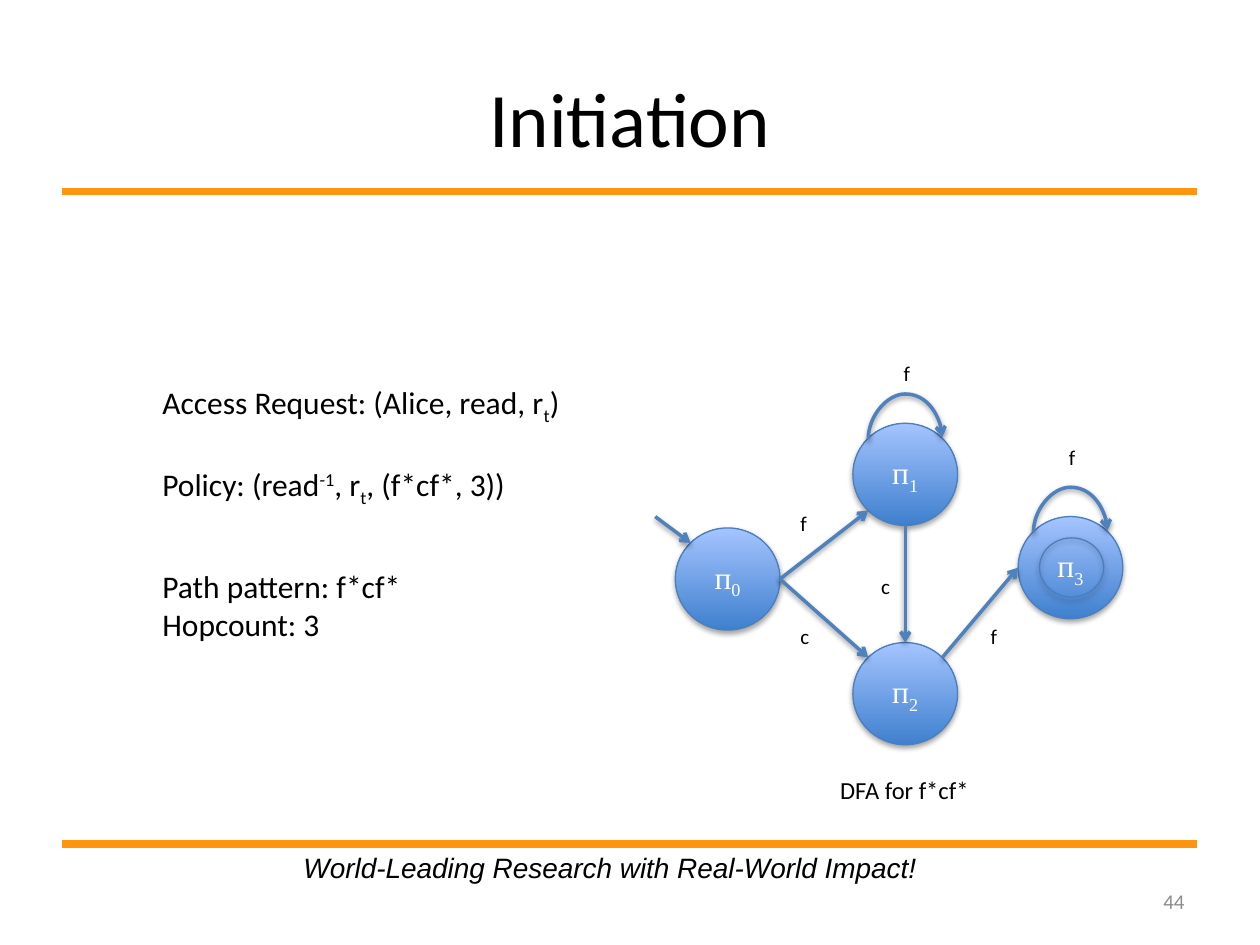
from math import cos, radians, sin

from lxml import etree
from pptx import Presentation
from pptx.dml.color import RGBColor
from pptx.enum.shapes import MSO_CONNECTOR as Link, MSO_SHAPE as Preset
from pptx.enum.text import MSO_ANCHOR as Anchor, PP_ALIGN as Align
from pptx.oxml.ns import qn
from pptx.util import Pt

BLACK = RGBColor(0x00, 0x00, 0x00)
WHITE = RGBColor(0xFF, 0xFF, 0xFF)
GRAY = RGBColor(0x8C, 0x8C, 0x8C)
ORANGE = RGBColor(0xFF, 0x95, 0x0E)
ARROW_BLUE = RGBColor(0x4F, 0x81, 0xBD)
OUTLINE_BLUE = RGBColor(0x4B, 0x7E, 0xBC)
DEEP_BLUE = RGBColor(0x3F, 0x80, 0xCE)
PALE_BLUE = RGBColor(0xA4, 0xC4, 0xFF)

STATE_W, STATE_H = 59.8, 58.4
RIGHT, BOTTOM_RIGHT, BOTTOM, BOTTOM_LEFT = 0, 45, 90, 135
LEFT, TOP_LEFT, TOP_RIGHT = 180, 225, 315


def set_effects(shape, opacity=None, distance=1.7):
    props = shape._element.spPr
    for old in props.findall(qn("a:effectLst")):
        props.remove(old)
    effects = etree.SubElement(props, qn("a:effectLst"))
    if opacity:
        shadow = etree.SubElement(
            effects, qn("a:outerShdw"), blurRad=str(Pt(3.1)),
            dist=str(Pt(distance)), dir="5400000", rotWithShape="0")
        tint = etree.SubElement(shadow, qn("a:srgbClr"), val="000000")
        etree.SubElement(tint, qn("a:alpha"), val=str(opacity * 1000))


def write(paragraph, pieces, size, font, color, italic=None):
    for words, baseline in pieces:
        run = paragraph.add_run()
        run.text = words
        run.font.size = Pt(size)
        run.font.name = font
        run.font.italic = italic
        run.font.color.rgb = color
        if baseline:
            run._r.get_or_add_rPr().set("baseline", str(baseline * 1000))


def add_text(slide, box, lines, size, color=BLACK, font="Calibri",
             align=Align.LEFT, anchor=Anchor.TOP, wrap=True, italic=None):
    frame = slide.shapes.add_textbox(*map(Pt, box)).text_frame
    frame.word_wrap = wrap
    frame.vertical_anchor = anchor
    for index, line in enumerate(lines):
        paragraph = frame.add_paragraph() if index else frame.paragraphs[0]
        paragraph.alignment = align
        pieces = [(line, 0)] if isinstance(line, str) else line
        write(paragraph, pieces, size, font, color, italic)


def add_rule(slide, y):
    rule = slide.shapes.add_connector(
        Link.STRAIGHT, Pt(35.3), Pt(y), Pt(684), Pt(y))
    rule.line.color.rgb = ORANGE
    rule.line.width = Pt(4.31)
    set_effects(rule)


def add_circle(slide, box):
    circle = slide.shapes.add_shape(Preset.OVAL, *map(Pt, box))
    circle.fill.background()
    circle.line.color.rgb = OUTLINE_BLUE
    circle.line.width = Pt(0.75)
    return circle


def add_state(slide, corner, number):
    state = add_circle(slide, (*corner, STATE_W, STATE_H))
    state.fill.gradient()
    state.fill.gradient_angle = 90
    for stop, color in zip(state.fill.gradient_stops, (DEEP_BLUE, PALE_BLUE)):
        stop.color.rgb = color
    set_effects(state, 35, 1.8)
    state.text_frame.vertical_anchor = Anchor.MIDDLE
    name = state.text_frame.paragraphs[0]
    name.alignment = Align.CENTER
    write(name, [("п", 0), (str(number), -25)], 18, "Times New Roman", WHITE)


def rim(corner, angle):
    x, y = corner
    return (x + STATE_W / 2 * (1 + cos(radians(angle))),
            y + STATE_H / 2 * (1 + sin(radians(angle))))


def add_arrow(slide, start, end, kind=Link.STRAIGHT):
    arrow = slide.shapes.add_connector(kind, *map(Pt, (*start, *end)))
    arrow.line.color.rgb = ARROW_BLUE
    arrow.line.width = Pt(2)
    etree.SubElement(arrow.line._get_or_add_ln(), qn("a:tailEnd"), type="arrow")
    set_effects(arrow, 38, 1.6)
    return arrow


def add_loop(slide, corner):
    (x1, y), (x2, _) = rim(corner, TOP_LEFT), rim(corner, TOP_RIGHT)
    middle, span = (x1 + x2) / 2, x2 - x1
    loop = add_arrow(slide, (middle - 0.5, y - span / 2),
                     (middle + 0.5, y + span / 2), Link.CURVE)
    props = loop._element.spPr
    for key, value in (("rot", "5400000"), ("flipH", "1"), ("flipV", "1")):
        props.find(qn("a:xfrm")).set(key, value)
    geometry = props.find(qn("a:prstGeom"))
    guides = geometry.find(qn("a:avLst"))
    if guides is None:
        guides = etree.SubElement(geometry, qn("a:avLst"))
    etree.SubElement(guides, qn("a:gd"), name="adj1", fmla="val 2600000")


def add_automaton(slide):
    states = [(385.9, 301.7), (487.4, 241.9), (487.4, 367.2), (581.8, 295.2)]
    for number, corner in enumerate(states):
        add_state(slide, corner, number)
    add_arrow(slide, (374.4, 295.2), rim(states[0], TOP_LEFT))
    for source, leave, target, enter in (
            (0, RIGHT, 1, BOTTOM_LEFT), (0, RIGHT, 2, TOP_LEFT),
            (1, BOTTOM, 2, 270), (2, TOP_RIGHT, 3, LEFT)):
        add_arrow(slide, rim(states[source], leave), rim(states[target], enter))
    for looped in (1, 3):
        add_loop(slide, states[looped])
    for symbol, x, y in (("f", 510.5, 202.3), ("f", 451.4, 288),
                         ("f", 604.8, 250.6), ("c", 451.4, 352.8),
                         ("c", 497.5, 324), ("f", 560.2, 352.8)):
        add_text(slide, (x, y, 13, 21.6), [symbol], 12, wrap=False)
    add_text(slide, (473, 439.2, 89.3, 24.5), ["DFA for f*cf*"], 14, wrap=False)
    set_effects(add_circle(slide, (594, 307.4, 36.7, 33.8)), 35, 1.8)


def main():
    deck = Presentation()
    deck.slide_width, deck.slide_height = Pt(720), Pt(540)
    slide = deck.slides.add_slide(deck.slide_layouts[6])
    for y in (109.4, 482.4):
        add_rule(slide, y)
    add_text(slide, (36, 21.6, 648, 90), ["Initiation"], 44,
             align=Align.CENTER, anchor=Anchor.MIDDLE)
    add_text(slide, (516, 500.4, 168, 28.8), ["44"], 12, GRAY,
             align=Align.RIGHT, anchor=Anchor.MIDDLE)
    request = [("Access Request: (Alice, read, r", 0), ("t", -25), (")", 0)]
    policy = [("Policy: (read", 0), ("-1", 30), (", r", 0), ("t", -25),
              (", (f*cf*, 3))", 0)]
    for y, height, lines in ((215.3, 29, [request]), (262.1, 29, [policy]),
                             (320.4, 51, ["Path pattern: f*cf*", "Hopcount: 3"])):
        add_text(slide, (85.7, y, 247, height), lines, 18)
    add_automaton(slide)
    add_text(slide, (166.3, 482.4, 365.8, 26.6),
             ["World-Leading Research with Real-World Impact!"], 16,
             font="Arial", wrap=False, italic=True)
    deck.save("out.pptx")


if __name__ == "__main__":
    main()
